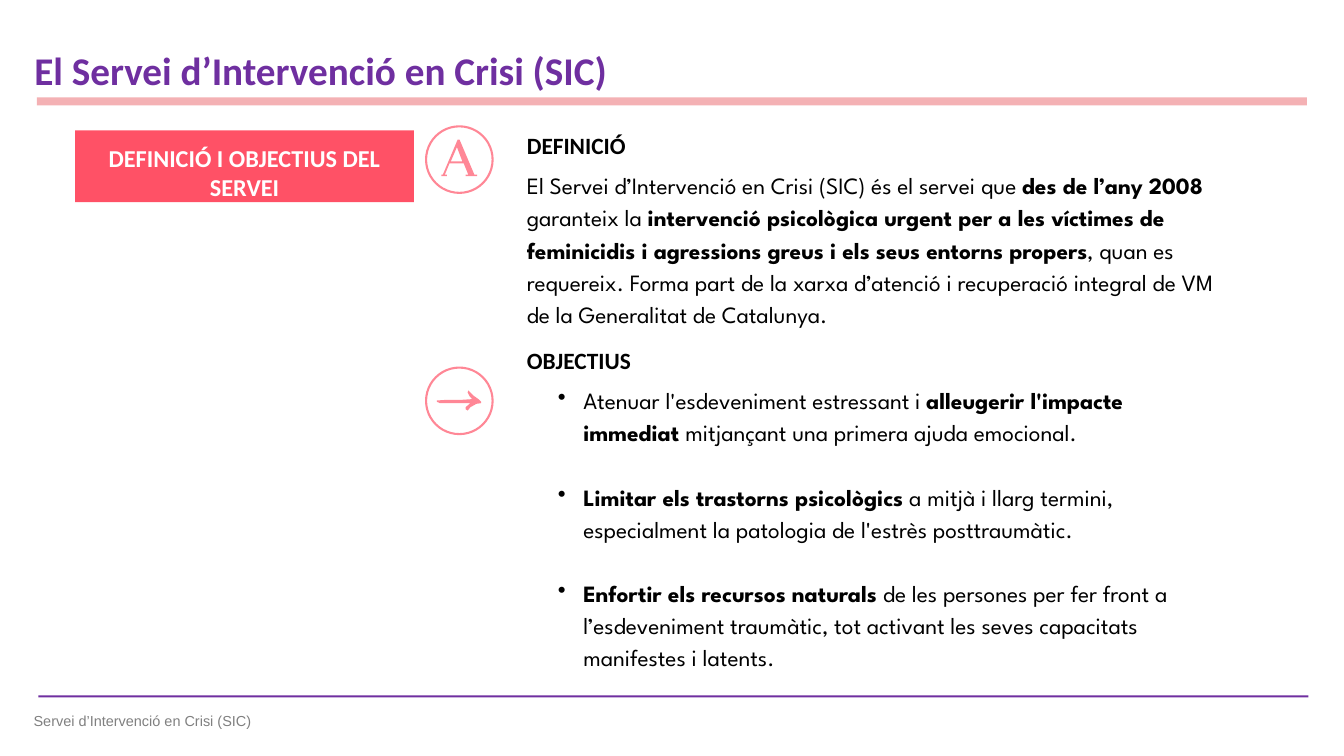
from pptx import Presentation
from pptx import util as u
from pptx.dml.color import RGBColor
from pptx.enum import shapes, text
from pptx.oxml import ns, xmlchemy

COLORS = {"purple": "6F2FA0", "rose": "F4B1B4", "red": "FF112E",
          "white": "FFFFFF", "black": "000000", "gray": "808080"}
HEADING, BODY, SMALL = "Calibri", "League Spartan", "Arial"

LETTER_A = [
    [(.25, .76), (.25, .74), (.27, .74), (.49, .22), (.52, .22), (.74, .74),
     (.78, .74), (.78, .76), (.61, .76), (.61, .74), (.65, .74), (.58, .57),
     (.37, .57), (.30, .74), (.33, .74), (.33, .76)],
    [(.39, .54), (.48, .33), (.56, .54)],
]
ARROW = [
    [(.84, .53), (.80, .49), (.73, .44), (.67, .38), (.65, .36), (.64, .39),
     (.67, .45), (.71, .49), (.56, .50), (.34, .50), (.18, .51), (.18, .53),
     (.23, .55), (.68, .55), (.61, .61), (.61, .64), (.64, .66), (.68, .61),
     (.77, .56), (.84, .55)],
]

DEFINITION = [
    ("El Servei d’Intervenció en Crisi (SIC) és el servei que ", False),
    ("des de l’any 2008 ", True),
    ("garanteix la ", False),
    ("intervenció psicològica urgent per a les víctimes de feminicidis i "
     "agressions greus i els seus entorns propers", True),
    (", quan es requereix. Forma part de la xarxa d’atenció i recuperació "
     "integral de VM de la Generalitat de Catalunya.", False),
]
GOALS = [
    [("Atenuar l'esdeveniment estressant i ", False),
     ("alleugerir l'impacte immediat ", True),
     ("mitjançant una primera ajuda emocional.", False)],
    [("Limitar els trastorns psicològics ", True),
     ("a mitjà i llarg termini, especialment la patologia de l'estrès "
      "posttraumàtic.", False)],
    [("Enfortir els recursos naturals ", True),
     ("de les persones per fer front a l’esdeveniment traumàtic, tot activant "
      "les seves capacitats manifestes i latents.", False)],
]


def rgb(name):
    """Return a palette colour."""
    return RGBColor.from_string(COLORS[name])


def fade(shape, opacity):
    """Make the shape's colours partly transparent."""
    for color in shape._element.iter(ns.qn("a:srgbClr")):
        alpha = xmlchemy.OxmlElement("a:alpha")
        alpha.set("val", str(opacity * 1000))
        color.append(alpha)


def add_block(slide, kind, box, color):
    """Add a plain filled preset shape without outline or shadow."""
    block = slide.shapes.add_shape(kind, *map(u.Inches, box))
    block.shadow.inherit = False
    block.fill.solid()
    block.fill.fore_color.rgb = rgb(color)
    block.line.fill.background()
    return block


def set_frame(frame, top_inset):
    """Wrap a text frame from the top with only a top inset."""
    frame.word_wrap = True
    frame.vertical_anchor = text.MSO_ANCHOR.TOP
    frame.margin_left = frame.margin_right = frame.margin_bottom = 0
    frame.margin_top = u.Inches(top_inset)
    return frame


def add_text_box(slide, box, top_inset):
    """Add a text box and return its frame."""
    return set_frame(slide.shapes.add_textbox(*map(u.Inches, box)).text_frame, top_inset)


def add_run(paragraph, words, size, font, color, bold=False):
    """Add one styled run."""
    run = paragraph.add_run()
    run.text = words
    run.font.size, run.font.name, run.font.bold = u.Pt(size), font, bold
    run.font.color.rgb = rgb(color)


def indent(paragraph, left, first=0):
    """Set the left margin and first-line indent."""
    properties = paragraph._p.get_or_add_pPr()
    properties.set("marL", str(u.Inches(left)))
    properties.set("indent", str(u.Inches(first)))
    return properties


def add_heading(paragraph, words, before=0):
    """Write a section heading."""
    indent(paragraph, 0.01)
    if before:
        paragraph.space_before = u.Pt(before)
    add_run(paragraph, words, 25, HEADING, "black", True)


def add_body(paragraph, pieces, before, bulleted=False):
    """Write a body paragraph of plain and bold pieces."""
    if bulleted:
        properties = indent(paragraph, 0.85, -0.38)
        bullet_color = xmlchemy.OxmlElement("a:buClr")
        shade = xmlchemy.OxmlElement("a:srgbClr")
        shade.set("val", COLORS["black"])
        bullet_color.append(shade)
        bullet = xmlchemy.OxmlElement("a:buChar")
        bullet.set("char", "•")
        properties.extend([bullet_color, bullet])
    else:
        indent(paragraph, 0.01)
    paragraph.line_spacing = 1.15
    paragraph.space_before = u.Pt(before)
    for words, bold in pieces:
        add_run(paragraph, words, 25, BODY, "black", bold)


def add_header(slide, left, top):
    """Place the title and the rule under it."""
    add_block(slide, shapes.MSO_SHAPE.RECTANGLE, (left + 0.06, top + 1.26, 18.9, 0.12), "rose")
    title = add_text_box(slide, (left, top, 15.6, 1.21), 0.5).paragraphs[0]
    indent(title, 0.02)
    add_run(title, "El Servei d’Intervenció en Crisi (SIC)", 42, HEADING, "purple", True)


def add_label(slide, box):
    """Place the red topic label."""
    label = add_block(slide, shapes.MSO_SHAPE.RECTANGLE, box, "red")
    fade(label, 73)
    topic = set_frame(label.text_frame, 0.19).paragraphs[0]
    topic.alignment = text.PP_ALIGN.CENTER
    add_run(topic, "DEFINICIÓ I OBJECTIUS DEL SERVEI", 26, HEADING, "white", True)


def add_badge(slide, left, top, contours):
    """Place a ring with a drawn symbol inside."""
    ring = slide.shapes.add_shape(
        shapes.MSO_SHAPE.OVAL, *map(u.Inches, (left + 0.02, top + 0.02, 0.99, 0.99)))
    ring.shadow.inherit = False
    ring.fill.background()
    ring.line.color.rgb = rgb("red")
    ring.line.width = u.Pt(2.25)
    fade(ring, 50)

    outlines = [[(u.Inches(left + x), u.Inches(top + y)) for x, y in contour]
                for contour in contours]
    builder = slide.shapes.build_freeform(*outlines[0][0])
    builder.add_line_segments(outlines[0][1:])
    for outline in outlines[1:]:
        builder.move_to(*outline[0])
        builder.add_line_segments(outline[1:])
    symbol = builder.convert_to_shape()
    symbol.shadow.inherit = False
    symbol.fill.solid()
    symbol.fill.fore_color.rgb = rgb("red")
    symbol.line.fill.background()
    fade(symbol, 50)


def add_content(slide, box):
    """Place the definition and the list of goals."""
    frame = add_text_box(slide, box, 0.2)
    add_heading(frame.paragraphs[0], "DEFINICIÓ")
    add_body(frame.add_paragraph(), DEFINITION, 8.9)
    add_heading(frame.add_paragraph(), "OBJECTIUS", 19.4)
    for number, goal in enumerate(GOALS):
        add_body(frame.add_paragraph(), goal, 34.3 if number else 8.6, True)


def add_footer(slide, left, top):
    """Place the bottom rule and the service name."""
    add_block(slide, shapes.MSO_SHAPE.RECTANGLE, (left + 0.08, top - 0.05, 18.9, 0.03), "purple")
    service = add_text_box(slide, (left, top, 3.32, 0.42), 0.18).paragraphs[0]
    indent(service, 0.01)
    service.line_spacing = 1.04
    add_run(service, "Servei d’Intervenció en Crisi (SIC)", 15.5, SMALL, "gray")


def main():
    """Build and save the slide."""
    deck = Presentation()
    deck.slide_width, deck.slide_height = u.Inches(20), u.Inches(11.25)
    slide = deck.slides.add_slide(deck.slide_layouts[6])
    add_header(slide, 0.49, 0.19)
    add_label(slide, (1.12, 1.94, 5.04, 1.07))
    for top, symbol in ((1.86, LETTER_A), (5.45, ARROW)):
        add_badge(slide, 6.32, top, symbol)
    add_content(slide, (7.83, 1.75, 10.39, 8.34))
    add_footer(slide, 0.49, 10.4)
    deck.save("out.pptx")


if __name__ == "__main__":
    main()
